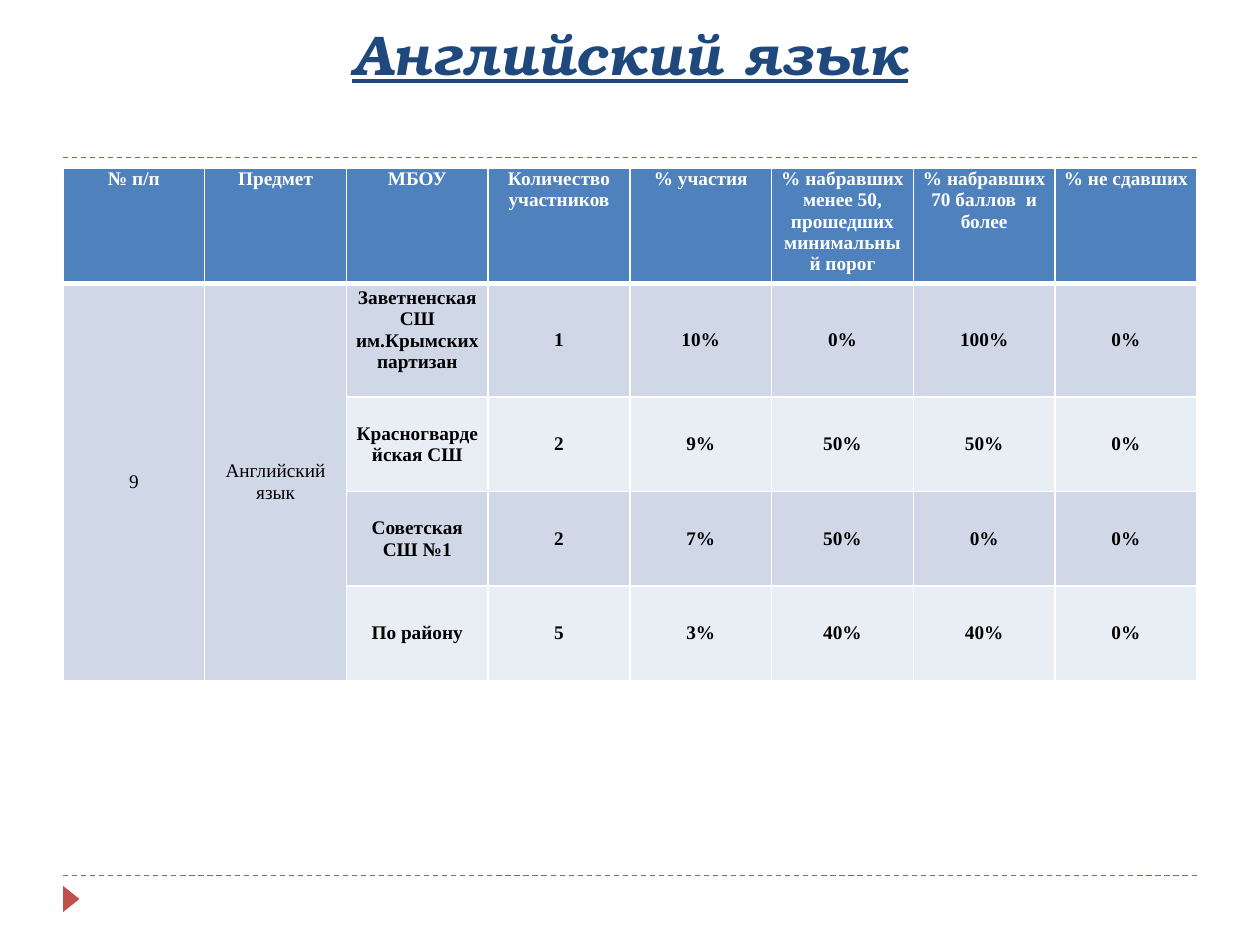
from dataclasses import dataclass

from lxml.etree import SubElement
from pptx import Presentation
from pptx.dml.color import RGBColor
from pptx.enum.dml import MSO_LINE
from pptx.enum.shapes import MSO_CONNECTOR, MSO_SHAPE
from pptx.enum.text import MSO_ANCHOR, PP_ALIGN
from pptx.oxml.ns import qn
from pptx.slide import Slide
from pptx.table import Table, _Cell
from pptx.util import Pt

RED = RGBColor(0xC0, 0x50, 0x4D)
NAVY = RGBColor(0x1F, 0x49, 0x7D)
BLUE = RGBColor(0x4F, 0x81, 0xBD)
PALE = RGBColor(0xD0, 0xD8, 0xE8)
LIGHT = RGBColor(0xE9, 0xED, 0xF4)
WHITE = RGBColor(0xFF, 0xFF, 0xFF)
BLACK = RGBColor(0, 0, 0)
LEFT, WIDTH = 36, 648


@dataclass
class Row:
    """A table row: its texts, height, fill and rules above and below."""
    texts: list[str]
    height: float
    fill: RGBColor
    above: float = 1
    below: float = 1
    foot: float = 0


ROWS = [
    Row(["№ п/п", "Предмет", "МБОУ", "Количество участников", "% участия",
         "% набравших менее 50, прошедших минимальный порог",
         "% набравших 70 баллов  и более", "% не сдавших"],
        61, BLUE, below=3),
    Row(["9", "Английский язык", "Заветненская СШ им.Крымских партизан",
         "1", "10%", "0%", "100%", "0%"], 61, PALE, above=3, foot=12),
    Row(["", "", "Красногвардейская СШ", "2", "9%", "50%", "50%", "0%"],
        54, LIGHT),
    Row(["", "", "Советская СШ №1", "2", "7%", "50%", "0%", "0%"], 54, PALE),
    Row(["", "", "По району", "5", "3%", "40%", "40%", "0%"], 54, LIGHT),
]


def add_rule(slide: Slide, y: float) -> None:
    """Draw a dashed line across the slide."""
    rule = slide.shapes.add_connector(
        MSO_CONNECTOR.STRAIGHT, Pt(LEFT), Pt(y), Pt(LEFT + WIDTH), Pt(y))
    rule.line.color.rgb = RED
    rule.line.width = Pt(0.75)
    rule.line.dash_style = MSO_LINE.DASH
    SubElement(rule.element.spPr, qn("a:effectLst"))


def add_mark(slide: Slide) -> None:
    """Draw the small arrow at the foot."""
    mark = slide.shapes.add_shape(
        MSO_SHAPE.ISOSCELES_TRIANGLE, Pt(33.2), Pt(509), Pt(15), Pt(9.4))
    mark.rotation = 90
    mark.shadow.inherit = False
    mark.fill.solid()
    mark.fill.fore_color.rgb = RED
    mark.line.fill.background()


def add_title(slide: Slide) -> None:
    """Write the heading."""
    box = slide.shapes.add_textbox(Pt(LEFT), Pt(12), Pt(WIDTH), Pt(78))
    frame = box.text_frame
    frame.word_wrap = True
    frame.vertical_anchor = MSO_ANCHOR.BOTTOM
    frame.margin_top, frame.margin_bottom = Pt(0), Pt(42)
    frame.text = "Английский язык"
    para = frame.paragraphs[0]
    para.alignment = PP_ALIGN.CENTER
    font = para.runs[0].font
    font.name, font.size = "TeX Gyre Bonum", Pt(32)
    font.bold = font.italic = font.underline = True
    font.color.rgb = NAVY


def set_edges(cell: _Cell, row: Row) -> None:
    """Give a cell its white borders."""
    props = cell._tc.get_or_add_tcPr()
    sides = {"lnL": 1, "lnR": 1, "lnT": row.above, "lnB": row.below}
    for side, width in sides.items():
        line = SubElement(props, qn(f"a:{side}"), w=str(Pt(width)))
        fill = SubElement(line, qn("a:solidFill"))
        SubElement(fill, qn("a:srgbClr"), val=str(WHITE))


def fill_cell(cell: _Cell, text: str, row: Row, head: bool, bold: bool) -> None:
    """Style one cell and write its text."""
    set_edges(cell, row)
    cell.fill.solid()
    cell.fill.fore_color.rgb = row.fill
    cell.margin_left = cell.margin_right = Pt(5)
    cell.margin_top, cell.margin_bottom = Pt(0), Pt(0)
    cell.vertical_anchor = MSO_ANCHOR.TOP if head else MSO_ANCHOR.MIDDLE
    if not text:
        return
    cell.text_frame.text = text
    para = cell.text_frame.paragraphs[0]
    para.alignment = PP_ALIGN.CENTER
    font = para.runs[0].font
    font.name, font.size, font.bold = "Times New Roman", Pt(11), bold
    font.color.rgb = WHITE if head else BLACK


def fill_table(table: Table) -> None:
    """Size the grid, fill it and merge the first two columns."""
    for col in table.columns:
        col.width = Pt(WIDTH / len(table.columns))
    for r, row in enumerate(ROWS):
        table.rows[r].height = Pt(row.height)
        for c, text in enumerate(row.texts):
            head = r == 0
            fill_cell(table.cell(r, c), text, row, head, head or c > 1)
        table.cell(r, 2).margin_bottom = Pt(row.foot)
    for c in range(2):
        table.cell(1, c).merge(table.cell(len(ROWS) - 1, c))


def main() -> None:
    """Build and save the slide."""
    deck = Presentation()
    deck.slide_width, deck.slide_height = Pt(720), Pt(540)
    slide = deck.slides.add_slide(deck.slide_layouts[6])
    for y in (500.4, 90):
        add_rule(slide, y)
    add_mark(slide)
    add_title(slide)
    grid = slide.shapes.add_table(
        len(ROWS), len(ROWS[0].texts), Pt(LEFT), Pt(96), Pt(WIDTH),
        Pt(sum(row.height for row in ROWS)))
    fill_table(grid.table)
    deck.save("out.pptx")


if __name__ == "__main__":
    main()
